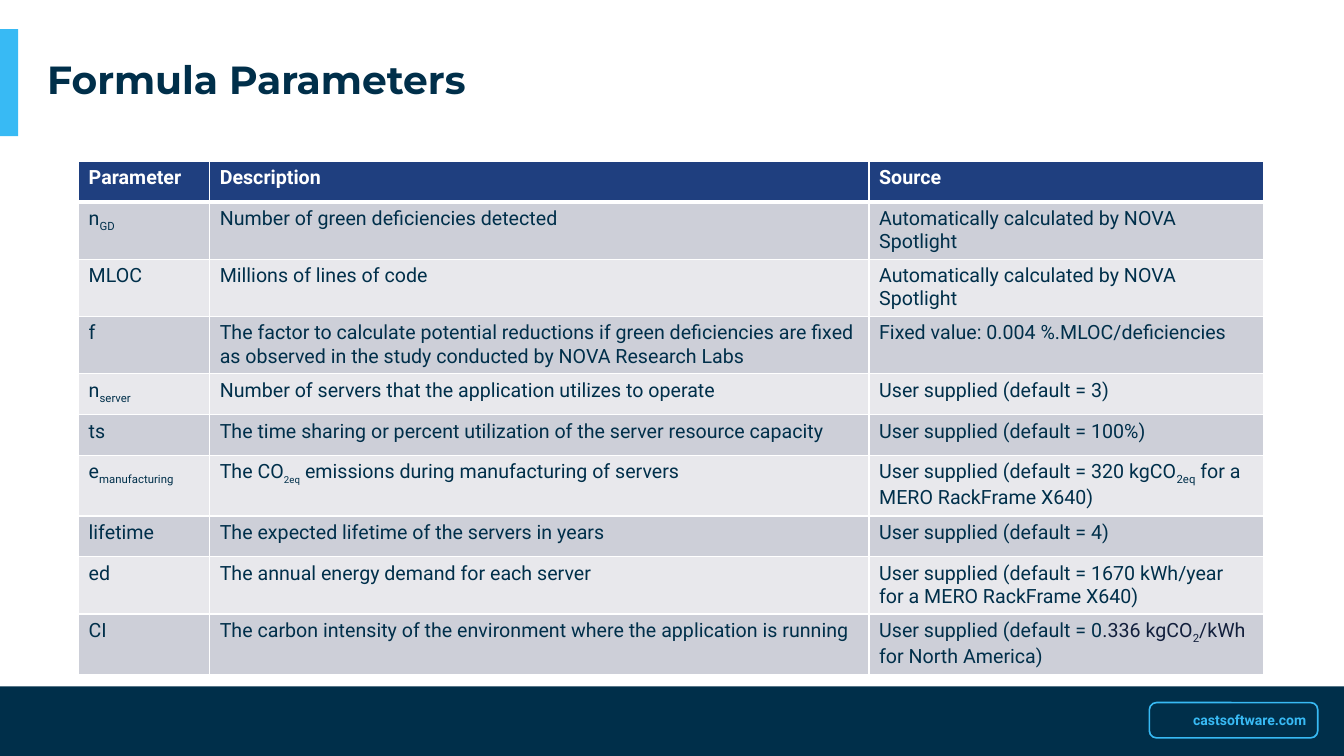
import dataclasses
import lxml.etree
import pptx
import pptx.dml.color
import pptx.enum.shapes
import pptx.enum.text
import pptx.oxml.ns
import pptx.util

Inches = pptx.util.Inches
Shapes = pptx.enum.shapes.MSO_SHAPE
Align = pptx.enum.text.PP_ALIGN
Middle = pptx.enum.text.MSO_ANCHOR.MIDDLE


@dataclasses.dataclass
class Theme:
    navy: str = "002F4A"
    ink: str = "121F3C"
    sky: str = "38BAF4"
    white: str = "FFFFFF"
    head: str = "1F3F7F"
    bands: tuple = ("CDCFD8", "E8E8EC")
    display: str = "Montserrat"
    body: str = "Roboto"
    title: float = 28
    cell: float = 14
    small: float = 12
    link: float = 10


def color(code):
    return pptx.dml.color.RGBColor.from_string(code)


class Deck:
    def __init__(self, theme):
        self.theme = theme
        self.file = pptx.Presentation()
        self.file.slide_width = Inches(13.33)
        self.file.slide_height = Inches(7.5)
        self.slide = self.file.slides.add_slide(self.file.slide_layouts[6])

    def style(self, run, size, code, font=None, bold=False):
        run.font.name = font or self.theme.body
        run.font.size = pptx.util.Pt(size)
        run.font.bold = bold
        run.font.color.rgb = color(code)

    def shape(self, kind, box, fill=None, line=None):
        item = self.slide.shapes.add_shape(kind, *map(Inches, box))
        item.shadow.inherit = False
        if fill:
            item.fill.solid()
            item.fill.fore_color.rgb = color(fill)
        else:
            item.fill.background()
        if line:
            item.line.color.rgb = color(line)
            item.line.width = pptx.util.Pt(1.15)
        else:
            item.line.fill.background()
        return item

    def text(self, words, box, size, code, font=None, align=Align.LEFT, inset=0.0, space=1.0):
        frame = self.slide.shapes.add_textbox(*map(Inches, box)).text_frame
        frame.word_wrap = True
        frame.vertical_anchor = Middle
        frame.margin_left = frame.margin_right = Inches(inset)
        frame.margin_top = frame.margin_bottom = Inches(inset / 2)
        frame.text = words
        line = frame.paragraphs[0]
        line.alignment = align
        line.line_spacing = space
        self.style(line.runs[0], size, code, font, bold=True)

    def edges(self, cell, widths):
        props = cell._tc.get_or_add_tcPr()
        for spot, (side, width) in enumerate(widths.items()):
            line = lxml.etree.Element(pptx.oxml.ns.qn(f"a:ln{side}"), w=str(pptx.util.Pt(width)))
            fill = lxml.etree.SubElement(line, pptx.oxml.ns.qn("a:solidFill"))
            lxml.etree.SubElement(fill, pptx.oxml.ns.qn("a:srgbClr"), val=self.theme.white)
            props.insert(spot, line)

    def fill_cell(self, cell, parts, row):
        theme = self.theme
        cell.fill.solid()
        cell.fill.fore_color.rgb = color(theme.bands[(row - 1) % 2] if row else theme.head)
        self.edges(cell, {"L": 1, "R": 1, "T": 3 if row == 1 else 1, "B": 1 if row else 3})
        line = cell.text_frame.paragraphs[0]
        for part in [parts] if isinstance(parts, str) else parts:
            words, *marks = [part] if isinstance(part, str) else part
            run = line.add_run()
            run.text = words
            size = theme.small if "small" in marks else theme.cell
            ink = theme.ink if "ink" in marks else theme.navy
            self.style(run, size, ink if row else theme.white, bold=not row)
            if "sub" in marks:
                run.font._element.set("baseline", "-25000")

    def table(self, rows, left, top, widths, height):
        frame = self.slide.shapes.add_table(
            len(rows), len(widths), Inches(left), Inches(top),
            Inches(sum(widths)), Inches(height))
        grid = frame.table
        grid.horz_banding = False
        for col, width in zip(grid.columns, widths):
            col.width = Inches(width)
        for r, row in enumerate(rows):
            grid.rows[r].height = Inches(height / len(rows))
            for c, parts in enumerate(row):
                self.fill_cell(grid.cell(r, c), parts, r)


# Each cell is a string, or a list of parts with their marks
ROWS = [
    ("Parameter", "Description", "Source"),
    (["n", ("GD", "sub")], "Number of green deficiencies detected",
     "Automatically calculated by NOVA Spotlight"),
    ("MLOC", "Millions of lines of code", "Automatically calculated by NOVA Spotlight"),
    ("f", "The factor to calculate potential reductions if green deficiencies are fixed "
     "as observed in the study conducted by NOVA Research Labs",
     "Fixed value: 0.004 %.MLOC/deficiencies"),
    (["n", ("server", "sub")], "Number of servers that the application utilizes to operate",
     "User supplied (default = 3)"),
    ("ts", "The time sharing or percent utilization of the server resource capacity",
     "User supplied (default = 100%)"),
    (["e", ("manufacturing", "sub")],
     ["The CO", ("2eq", "sub", "small"), " emissions during manufacturing of servers"],
     ["User supplied (default = 320 kgCO", ("2eq", "sub"), " for a MERO RackFrame X640)"]),
    ("lifetime", "The expected lifetime of the servers in years", "User supplied (default = 4)"),
    ("ed", "The annual energy demand for each server",
     "User supplied (default = 1670 kWh/year for a MERO RackFrame X640)"),
    ("CI", "The carbon intensity of the environment where the application is running",
     ["User supplied (default = 0", (".336 kgCO", "ink"), ("2", "ink", "sub"),
      ("/kWh ", "ink"), "for North America)"]),
]


def main():
    theme = Theme()
    deck = Deck(theme)

    # Footer band and side accent
    deck.shape(Shapes.RECTANGLE, (0, 6.81, 13.33, 0.69), fill=theme.navy)
    deck.shape(Shapes.RECTANGLE, (0, 0.29, 0.18, 1.06), fill=theme.sky)

    # Web address in its frame
    deck.text("castsoftware.com", (11.73, 6.97, 1.33, 0.35), theme.link, theme.sky,
              align=Align.CENTER)
    badge = deck.shape(Shapes.ROUNDED_RECTANGLE, (11.4, 6.97, 1.67, 0.35), line=theme.sky)
    badge.adjustments[0] = 0.2

    # Title
    deck.text("Formula Parameters", (0.37, 0.3, 12.61, 1.03), theme.title, theme.navy,
              font=theme.display, inset=0.1, space=0.9)

    # Parameter table
    deck.table(ROWS, 0.78, 1.6, (1.3, 6.54, 3.91), 4.06)

    deck.file.save("out.pptx")


if __name__ == "__main__":
    main()
